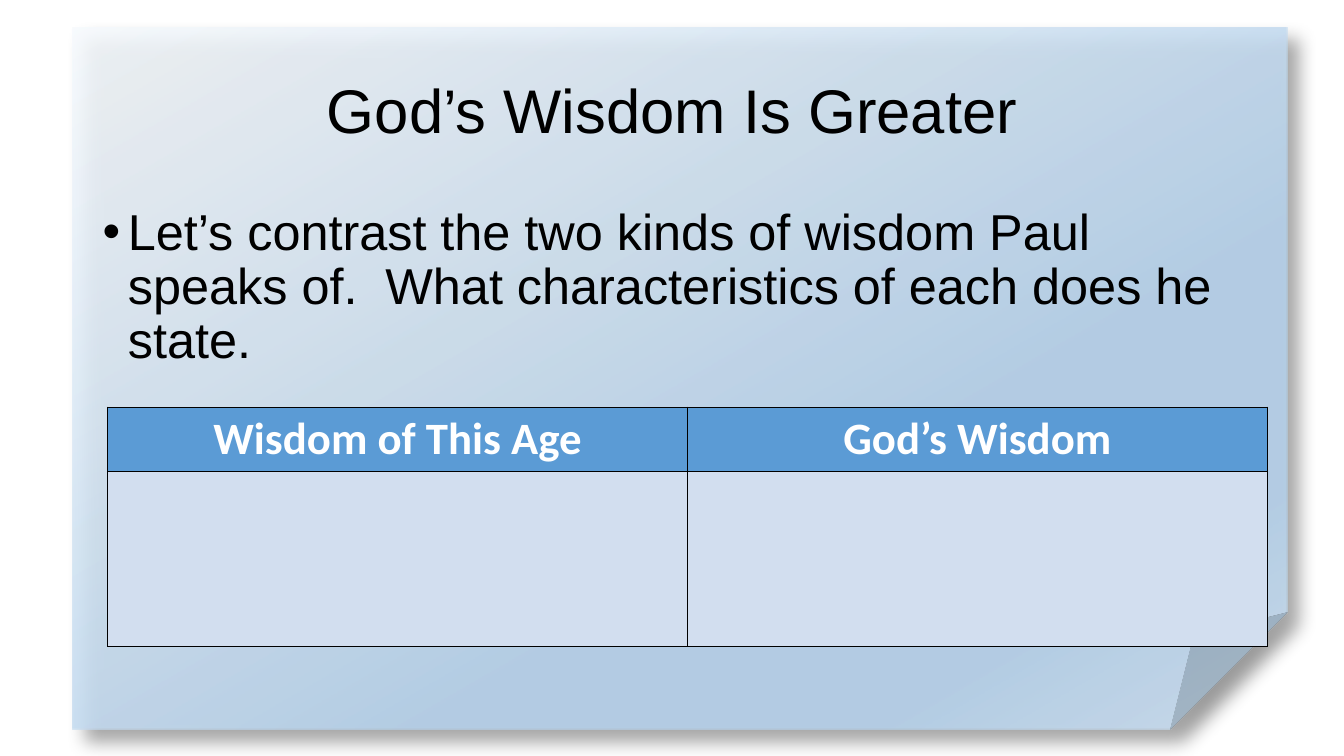
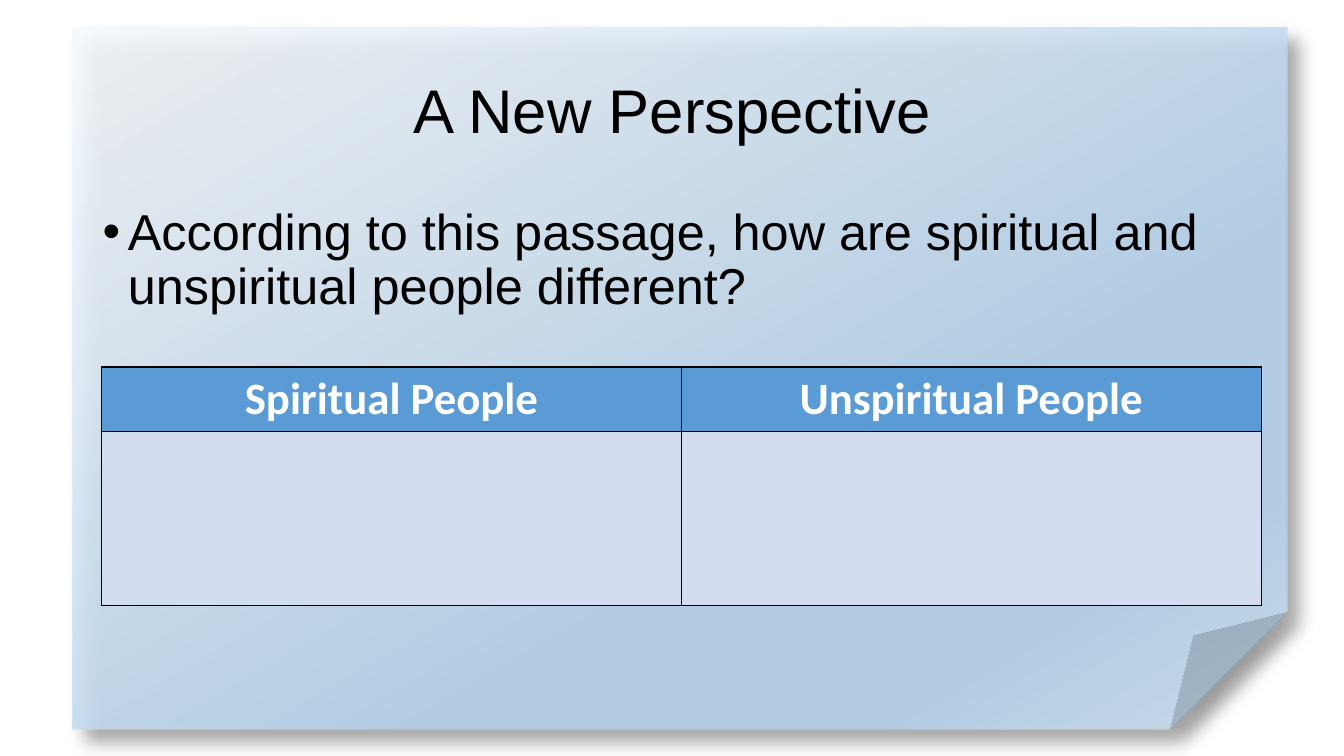
from pptx import Presentation
from pptx.dml.color import RGBColor
from pptx.enum.shapes import MSO_SHAPE
from pptx.enum.text import MSO_ANCHOR, PP_ALIGN
from pptx.oxml import parse_xml
from pptx.oxml.ns import nsdecls
from pptx.util import Inches, Pt

FOLDED_CORNER = MSO_SHAPE.FOLDED_CORNER
MIDDLE, TOP = MSO_ANCHOR.MIDDLE, MSO_ANCHOR.TOP
CENTER, LEFT = PP_ALIGN.CENTER, PP_ALIGN.LEFT

BLACK = RGBColor(0x00, 0x00, 0x00)
WHITE = RGBColor(0xFF, 0xFF, 0xFF)
HEADER_BLUE = RGBColor(0x5B, 0x9B, 0xD5)
CELL_BLUE = RGBColor(0xD2, 0xDE, 0xEF)
PAPER_LIGHT = RGBColor(0xF7, 0xFA, 0xFD)
PAPER_BLUE = RGBColor(0xB5, 0xD2, 0xEC)
PAPER_EDGE = RGBColor(0xCE, 0xE1, 0xF2)

PAPER_STOPS = [(0, PAPER_LIGHT), (64, PAPER_BLUE), (83, PAPER_BLUE), (100, PAPER_EDGE)]
PAPER_OPACITY = 87
SHADOW_OPACITY = 40

TEXT_FONT = "Arial"
TABLE_FONT = "Calibri"
CONTENT_LEFT, CONTENT_WIDTH = 0.92, 11.5
HEADER_HEIGHT, ANSWER_HEIGHT = 0.64, 1.73


def solid_color_xml(color, opacity=100):
    return f'<a:srgbClr val="{color}"><a:alpha val="{opacity * 1000}"/></a:srgbClr>'


def style_font(font, name, size, color, bold=False):
    font.name = name
    font.size = Pt(size)
    font.color.rgb = color
    font.bold = bold


def add_paper(slide):
    """Draw the translucent sheet with a turned corner behind the content."""
    paper = slide.shapes.add_shape(
        FOLDED_CORNER, Inches(0.72), Inches(0.27), Inches(12.05), Inches(6.97))
    paper.line.fill.background()
    paper.fill.gradient()
    paper.fill.gradient_angle = 300
    properties = paper.fill._xPr
    stops = properties.gradFill.gsLst
    for stop in list(stops):
        stops.remove(stop)
    for position, color in PAPER_STOPS:
        stops.append(parse_xml(
            f'<a:gs {nsdecls("a")} pos="{position * 1000}">'
            f'{solid_color_xml(color, PAPER_OPACITY)}</a:gs>'))
    paper.shadow.inherit = False
    properties.effectLst.append(parse_xml(
        f'<a:outerShdw {nsdecls("a")} blurRad="{Pt(13)}" dist="{Pt(13)}" '
        f'dir="2700000" algn="tl" rotWithShape="0">'
        f'{solid_color_xml(BLACK, SHADOW_OPACITY)}</a:outerShdw>'))


def add_bullet(paragraph):
    properties = paragraph._p.get_or_add_pPr()
    properties.set("marL", str(Inches(0.25)))
    properties.set("indent", str(-Inches(0.25)))
    properties.append(parse_xml(f'<a:buFont {nsdecls("a")} typeface="Arial"/>'))
    properties.append(parse_xml(f'<a:buChar {nsdecls("a")} char="•"/>'))


def add_text(slide, text, top, height, size, anchor, align, bulleted=False):
    box = slide.shapes.add_textbox(
        Inches(CONTENT_LEFT), Inches(top), Inches(CONTENT_WIDTH), Inches(height))
    frame = box.text_frame
    frame.word_wrap = True
    frame.vertical_anchor = anchor
    frame.text = text
    paragraph = frame.paragraphs[0]
    if bulleted:
        add_bullet(paragraph)
    paragraph.alignment = align
    paragraph.line_spacing = 0.9
    style_font(paragraph.runs[0].font, TEXT_FONT, size, BLACK)


def add_borders(cell):
    properties = cell._tc.get_or_add_tcPr()
    for side in ("lnL", "lnR", "lnT", "lnB"):
        properties.append(parse_xml(
            f'<a:{side} {nsdecls("a")} w="{Pt(1)}"><a:solidFill>'
            f'{solid_color_xml(BLACK)}</a:solidFill></a:{side}>'))


def fill_cell(cell, color):
    add_borders(cell)
    cell.fill.solid()
    cell.fill.fore_color.rgb = color


def add_contrast_table(slide, headings, left, top):
    """Add one heading per column above an empty row for answers."""
    table = slide.shapes.add_table(
        2, len(headings), Inches(left), Inches(top), Inches(CONTENT_WIDTH),
        Inches(HEADER_HEIGHT + ANSWER_HEIGHT)).table
    table.rows[0].height = Inches(HEADER_HEIGHT)
    table.rows[1].height = Inches(ANSWER_HEIGHT)
    for column, heading in enumerate(headings):
        header = table.cell(0, column)
        fill_cell(header, HEADER_BLUE)
        header.text_frame.text = heading
        paragraph = header.text_frame.paragraphs[0]
        paragraph.alignment = CENTER
        style_font(paragraph.runs[0].font, TABLE_FONT, 32, WHITE, bold=True)
        fill_cell(table.cell(1, column), CELL_BLUE)


def add_discussion_slide(deck, title, question, headings, table_left, table_top):
    slide = deck.slides.add_slide(deck.slide_layouts[6])
    add_paper(slide)
    add_text(slide, title, 0.4, 1.45, 44, MIDDLE, CENTER)
    add_text(slide, question, 2, 4.76, 36, TOP, LEFT, bulleted=True)
    add_contrast_table(slide, headings, table_left, table_top)


def main():
    deck = Presentation()
    deck.slide_width = Inches(13.33)
    deck.slide_height = Inches(7.5)
    add_discussion_slide(
        deck, "God’s Wisdom Is Greater",
        "Let’s contrast the two kinds of wisdom Paul speaks of.  "
        "What characteristics of each does he state.",
        ["Wisdom of This Age", "God’s Wisdom"], 1.07, 4.04)
    add_discussion_slide(
        deck, "A New Perspective",
        "According to this passage, how are spiritual and unspiritual people different?",
        ["Spiritual People", "Unspiritual People"], 1.01, 3.64)
    deck.save("out.pptx")


if __name__ == "__main__":
    main()
